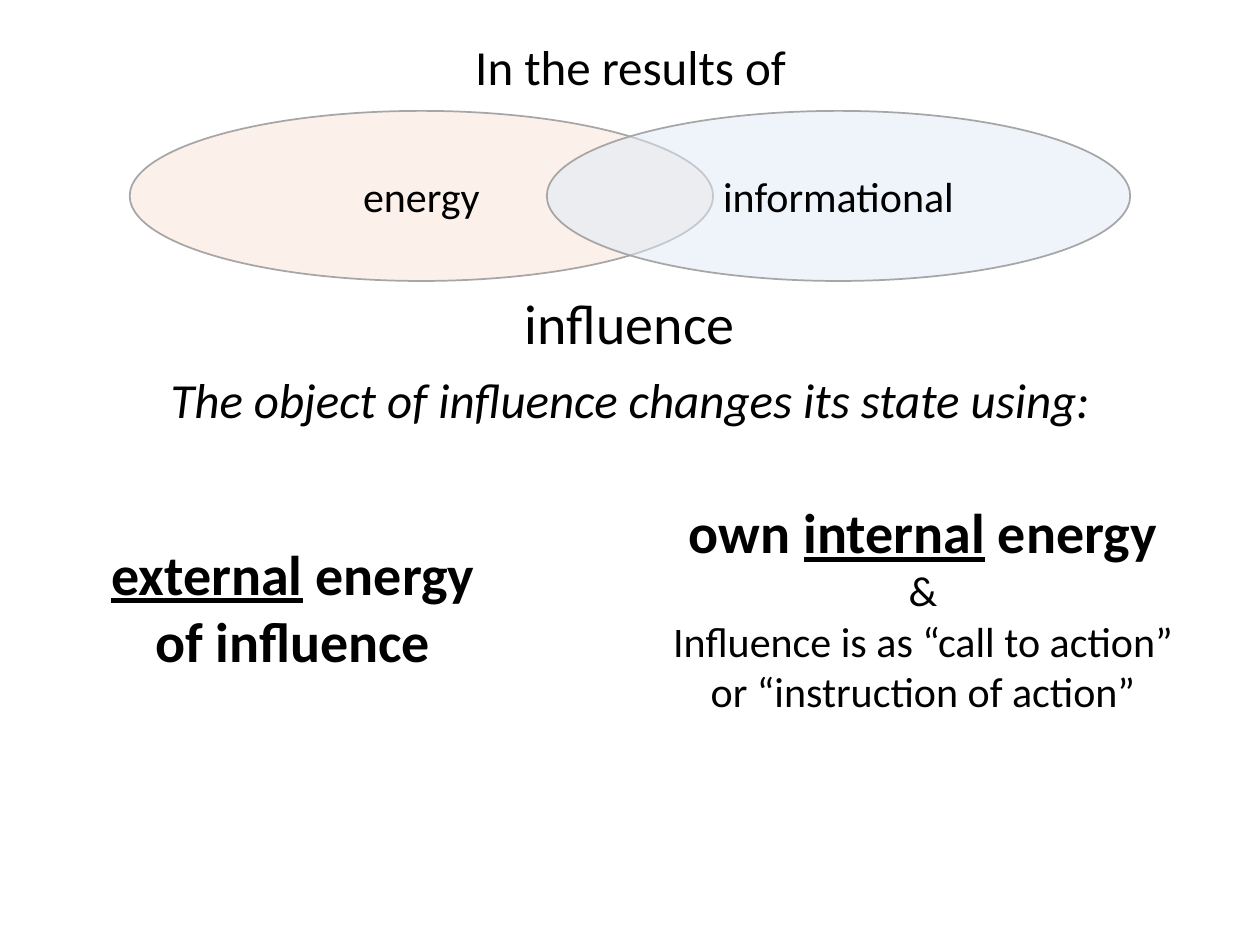
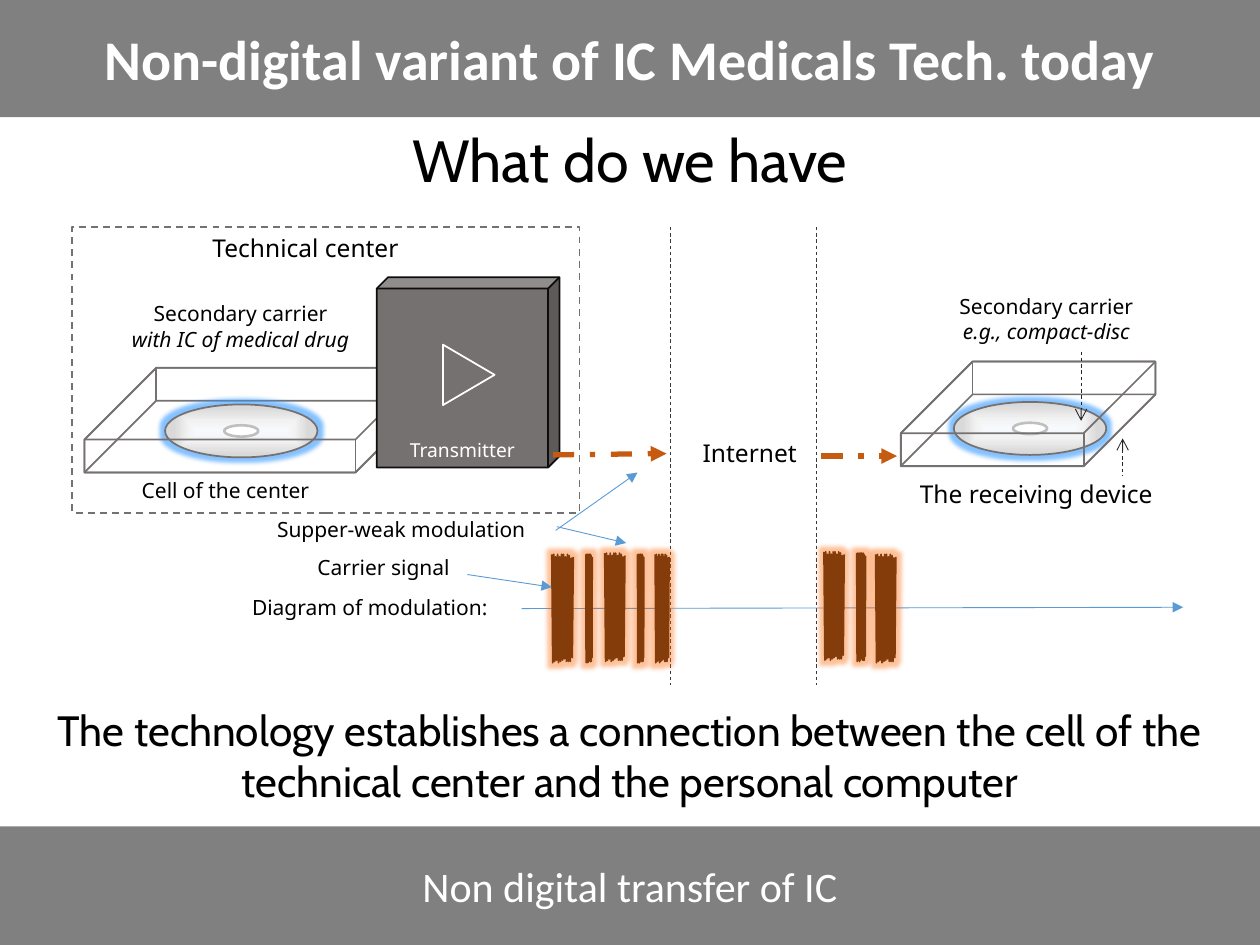
"""Build two slides on energy and informational influence and non-digital transfer."""
from lxml.etree import SubElement
from pptx import Presentation
from pptx.dml.color import RGBColor
from pptx.enum.dml import MSO_LINE as DASH
from pptx.enum.shapes import MSO_CONNECTOR, MSO_SHAPE as SHAPE
from pptx.enum.text import MSO_ANCHOR as ANCHOR, MSO_AUTO_SIZE as AUTO, PP_ALIGN
from pptx.oxml import parse_xml
from pptx.oxml.ns import nsdecls, qn
from pptx.util import Inches, Pt

BLACK, WHITE, BAND = "000000", "FFFFFF", "808080"
GREY, DARK, BLUE, ORANGE, BROWN = "767171", "3B3838", "5B9BD5", "C55A11", "843C0B"
GLOW = ('<a:glow {} rad="{}"><a:srgbClr val="{}"><a:alpha val="{}"/>'
        '</a:srgbClr></a:glow>')
rgb = RGBColor.from_string


def write(sp, paras, size, font="Calibri", color=BLACK, wrap=True, anchor=ANCHOR.TOP):
    """Fill a shape with centred paragraphs; "|" separates the runs of a paragraph."""
    tf = sp.text_frame
    tf.word_wrap, tf.vertical_anchor, tf.auto_size = wrap, anchor, AUTO.NONE
    for i, para in enumerate(paras):
        p = tf.paragraphs[0] if i == 0 else tf.add_paragraph()
        p.text, *rest = para.split("|")
        for part in rest:
            p.add_run().text = part
        p.alignment = PP_ALIGN.CENTER
        for r in p.runs:
            r.font.size, r.font.name = Pt(size), font
            r.font.color.rgb = rgb(color)
    return tf.paragraphs


def connect(s, start, end, color, width=0.5, dash=None, head=None, tail=None):
    """Draw a straight line with optional dash and arrowheads."""
    cx = s.shapes.add_connector(MSO_CONNECTOR.STRAIGHT, *map(Inches, start + end))
    cx.line.color.rgb, cx.line.width = rgb(color), Pt(width)
    if dash:
        cx.line.dash_style = dash
    for tag, kind in (("a:headEnd", head), ("a:tailEnd", tail)):
        if kind:
            SubElement(cx.line._get_or_add_ln(), qn(tag), type=kind)
    SubElement(cx._element.spPr, qn("a:effectLst"))


prs = Presentation()
prs.slide_width, prs.slide_height = Inches(10), Inches(7.5)
layout = prs.slide_layouts[5]

s = prs.slides.add_slide(layout)
title = s.shapes.title
title.left, title.top, title.width, title.height = map(Inches, (3.61, 0.24, 2.79, 0.57))
write(title, ["In the results of"], 28, wrap=False)

for left, fill, label in ((1.03, "FBE5D6", "energy"), (4.34, "DEEBF7", "informational")):
    sp = s.shapes.add_shape(SHAPE.OVAL, *map(Inches, (left, 0.88, 4.63, 1.35)))
    sp.shadow.inherit = False
    sp.fill.solid()
    sp.fill.fore_color.rgb = rgb(fill)
    SubElement(sp._element.spPr.find(".//" + qn("a:srgbClr")), qn("a:alpha"), val="50000")
    sp.line.color.rgb, sp.line.width = rgb("A6A6A6"), Pt(1)
    write(sp, [label], 24, anchor=ANCHOR.MIDDLE)

texts = []
for box, paras, size, wrap in (
    ((0, 2.24, 10, 0.64), ["influence"], 32, True),
    ((0, 2.88, 10, 0.57), ["The object of influence changes its state using:"], 28, True),
    ((5.22, 3.9, 4.21, 1.85), ["own |internal| energy", "&",
     "Influence is as “call to action”\vor “instruction of action”"], 24, False),
    ((0.77, 4.23, 3.11, 1.18), ["external| energy", "of influence"], 32, False),
):
    sp = s.shapes.add_textbox(*map(Inches, box))
    texts.append(write(sp, paras, size, wrap=wrap))
influence, statement, internal, external = texts
statement[0].runs[0].font.italic = True
for p in (internal[0], *external):
    for r in p.runs:
        r.font.size, r.font.bold = Pt(32), True
        r.font.underline = r.text in ("internal", "external")

s = prs.slides.add_slide(layout)
title = s.shapes.title
title.left, title.top, title.width, title.height = map(Inches, (0, 0, 10, 0.93))
footer = s.shapes.add_shape(SHAPE.RECTANGLE, *map(Inches, (0, 6.56, 10, 0.94)))
footer.shadow.inherit = False
for sp, text, size in (
    (title, "Non-digital variant of IC Medicals Tech. today", 32),
    (footer, "Non digital transfer of IC", 24),
):
    sp.fill.solid()
    sp.fill.fore_color.rgb = rgb(BAND)
    sp.line.fill.background()
    write(sp, [text], size, color=WHITE, anchor=ANCHOR.MIDDLE)
title.text_frame.paragraphs[0].runs[0].font.bold = True

for x in (5.32, 6.48):
    connect(s, (x, 1.8), (x, 5.44), DARK, dash=DASH.DASH)

parts = []
for left, top, width, disc_left, disc_top in (
    (0.67, 2.92, 2.72, 1.31, 3.21), (7.15, 2.87, 2.02, 7.57, 3.19),
):
    tray = (left, top, width, 0.83)
    parts += [
        ("back", SHAPE.CUBE, tray, None, GREY, 1),
        ("disc", SHAPE.OVAL, (disc_left, disc_top, 1.21, 0.42), None, GREY, 1),
        ("hub", SHAPE.OVAL, (disc_left + 0.47, disc_top + 0.165, 0.27, 0.09),
         WHITE, "BFBFBF", 1.5),
        ("front", SHAPE.CUBE, tray, None, GREY, 1),
    ]
parts += [
    ("center", SHAPE.RECTANGLE, (0.57, 1.8, 4.03, 2.27), None, GREY, 1),
    ("transmitter", SHAPE.CUBE, (2.99, 2.2, 1.45, 1.51), GREY, "0D0D0D", 1),
    ("play", SHAPE.ISOSCELES_TRIANGLE, (3.48, 2.77, 0.48, 0.41), None, WHITE, 1),
]
for role, kind, box, fill, line, width in parts:
    sp = s.shapes.add_shape(kind, *map(Inches, box))
    sp.shadow.inherit = False
    sp.line.color.rgb, sp.line.width = rgb(line), Pt(width)
    if fill:
        sp.fill.solid()
        sp.fill.fore_color.rgb = rgb(fill)
    else:
        sp.fill.background()
    spPr = sp._element.spPr
    if kind == SHAPE.CUBE:
        sp.adjustments[0] = 0.062 if role == "transmitter" else 0.686
    if role == "back":
        spPr.xfrm.set("flipH", "1")
        spPr.xfrm.set("flipV", "1")
    elif role == "disc":
        stops = "".join(f'<a:gs pos="{pos}000"><a:srgbClr val="{c}"/></a:gs>'
                        for pos, c in ((0, "F7FAFD"), (36, "F2F2F2"), (88, "D9D9D9")))
        spPr.replace(spPr.find(qn("a:noFill")), parse_xml(
            f'<a:gradFill {nsdecls("a")}><a:gsLst>{stops}</a:gsLst><a:path path="rect">'
            '<a:fillToRect l="50000" t="50000" r="50000" b="50000"/></a:path></a:gradFill>'))
        spPr.find(qn("a:effectLst")).append(
            parse_xml(GLOW.format(nsdecls("a"), Pt(5), "3399FF", 60000)))
    elif role == "center":
        sp.line.dash_style = DASH.DASH
    elif role == "transmitter":
        write(sp, ["Transmitter"], 11, "Noto Sans", WHITE, anchor=ANCHOR.BOTTOM)
    elif role == "play":
        sp.rotation = 90

for start, end in (((4.39, 3.61), (5.29, 3.6)), ((6.52, 3.62), (7.12, 3.62))):
    connect(s, start, end, ORANGE, 3, DASH.DASH_DOT, tail="triangle")
connect(s, (8.91, 3.48), (8.91, 3.77), "262626", dash=DASH.DASH, head="arrow")
connect(s, (8.58, 2.79), (8.58, 3.34), "262626", dash=DASH.DASH, tail="arrow")
connect(s, (4.14, 4.83), (9.39, 4.82), BLUE, tail="triangle")

peaks = (0, 0, 0.02, 0, 0.02, 0, 0, 0.02, 0, 0.01, 0.03)
valleys = (0.86, 0.85, 0.84, 0.86, 0.85, 0.84, 0.83, 0.85, 0.85, 0.85, 0.82)
strokes = [y for pair in zip(peaks, valleys) for y in pair] + [0.02]
for left, top, width in (
    (4.38, 4.4, 0.17), (4.65, 4.4, 0.05), (4.8, 4.39, 0.16), (5.06, 4.4, 0.05),
    (5.2, 4.4, 0.11), (6.54, 4.38, 0.16), (6.8, 4.39, 0.07), (6.95, 4.4, 0.16),
):
    step = width / (len(strokes) - 1)
    points = [(Inches(left + i * step), Inches(top + y)) for i, y in enumerate(strokes)]
    builder = s.shapes.build_freeform(*points[0])
    builder.add_line_segments(points[1:], close=False)
    sp = builder.convert_to_shape()
    sp.shadow.inherit = False
    sp.fill.background()
    sp.line.color.rgb, sp.line.width = rgb(BROWN), Pt(1)
    sp._element.spPr.find(qn("a:effectLst")).append(
        parse_xml(GLOW.format(nsdecls("a"), Pt(5), "FF6600", 40000)))

for start, end in (
    ((4.42, 4.18), (4.97, 4.31)), ((3.71, 4.56), (4.38, 4.66)), ((4.41, 4.21), (5.06, 3.75)),
):
    connect(s, start, end, BLUE, tail="triangle")

for box, paras, size in (
    ((1.43, 1.8, 1.99, 0.4), ["Technical center"], 14),
    ((7.02, 3.75, 2.41, 0.4), ["The receiving device"], 14),
    ((5.44, 3.43, 1.02, 0.4), ["Internet"], 14),
    ((0.92, 3.74, 1.74, 0.36), ["Cell of the center"], 12),
    ((1.97, 4.05, 2.43, 0.36), ["Supper-weak modulation"], 12),
    ((2.31, 4.35, 1.47, 0.36), ["Carrier signal"], 12),
    ((1.79, 4.67, 2.29, 0.36), ["Diagram of modulation:"], 12),
    ((0.78, 2.34, 2.26, 0.6), ["Secondary carrier", "with IC of medical drug"], 12),
    ((7.37, 2.28, 1.87, 0.6), ["Secondary carrier", "e.g.|, |compact-disc"], 12),
):
    sp = s.shapes.add_textbox(*map(Inches, box))
    for p in write(sp, paras, size, "Noto Sans", wrap=False)[1:]:
        for r in p.runs:
            r.font.italic = True
            if r.text == ", ":
                r.font.name = "Open Sans"

for box, text, size in (
    ((0, 0.93, 10, 0.67), "What do we have", 33.9),
    ((0, 5.54, 10, 0.92), "The technology establishes a connection between the cell of the "
     "technical center and the personal computer", 24.2),
):
    write(s.shapes.add_textbox(*map(Inches, box)), [text], size, "Cabin")

prs.save("out.pptx")
